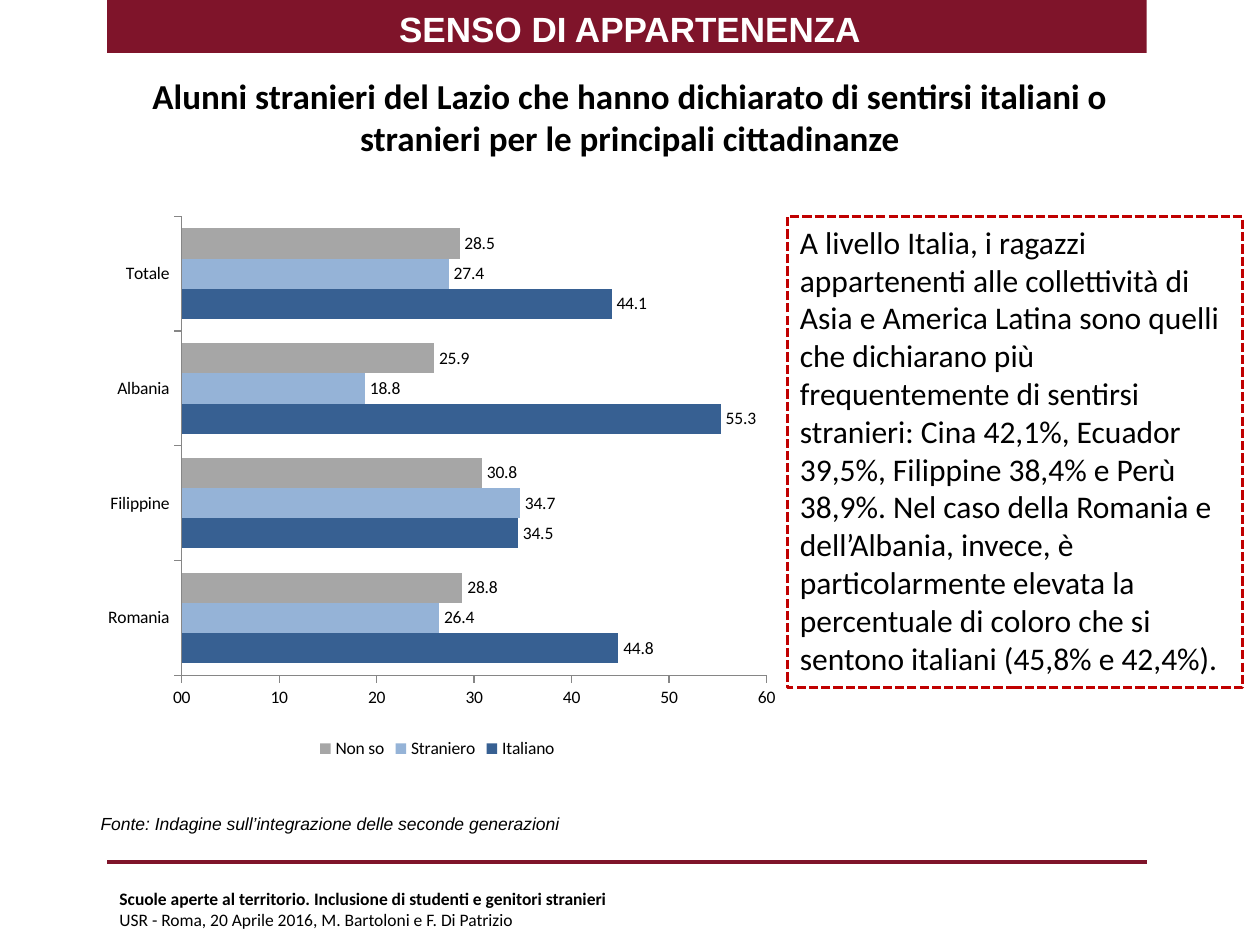
from lxml import etree
from pptx import Presentation
from pptx.chart.data import CategoryChartData as ChartData
from pptx.dml.color import RGBColor
from pptx.enum.chart import XL_CHART_TYPE as Kind, XL_LABEL_POSITION as Spot
from pptx.enum.chart import XL_LEGEND_POSITION as Side, XL_TICK_MARK as Tick
from pptx.enum.dml import MSO_LINE as Dash
from pptx.enum.shapes import MSO_CONNECTOR as Link, MSO_SHAPE as Shape
from pptx.enum.text import MSO_ANCHOR as Anchor, PP_ALIGN as Align
from pptx.oxml import parse_xml
from pptx.oxml.ns import nsdecls, qn
from pptx.util import Inches, Pt

WINE = RGBColor(0x7F, 0x14, 0x2A)
RED = RGBColor(0xC0, 0, 0)
BLACK = RGBColor(0, 0, 0)
WHITE = RGBColor(255, 255, 255)
GRAY = RGBColor(0x86, 0x86, 0x86)

HEAD = "SENSO DI APPARTENENZA"
TITLE = ("Alunni stranieri del Lazio che hanno dichiarato di sentirsi italiani o\v"
         "stranieri per le principali cittadinanze")
NOTE = ("A livello Italia, i ragazzi appartenenti alle collettività di Asia e "
        "America Latina sono quelli che dichiarano più frequentemente di sentirsi "
        "stranieri: Cina 42,1%, Ecuador 39,5%, Filippine 38,4% e Perù 38,9%. Nel "
        "caso della Romania e dell’Albania, invece, è particolarmente elevata la "
        "percentuale di coloro che si sentono italiani (45,8% e 42,4%).")
SOURCE = "Fonte: Indagine sull’integrazione delle seconde generazioni"
FOOT = ("Scuole aperte al territorio. Inclusione di studenti e genitori stranieri\n"
        "USR - Roma, 20 Aprile 2016, M. Bartoloni e F. Di Patrizio")
GROUPS = ["Romania", "Filippine", "Albania", "Totale"]
SERIES = [
    ("Italiano", [44.8, 34.5, 55.3, 44.1], RGBColor(0x37, 0x60, 0x92)),
    ("Straniero", [26.4, 34.7, 18.8, 27.4], RGBColor(0x95, 0xB3, 0xD7)),
    ("Non so", [28.8, 30.8, 25.9, 28.5], RGBColor(0xA6, 0xA6, 0xA6)),
]
PLOT = {"x": 0.134, "y": 0.037, "w": 0.838, "h": 0.808}


def write(shape, text, size, font="Calibri", color=BLACK, bold=False,
          italic=False, align=Align.LEFT, anchor=Anchor.TOP):
    frame = shape.text_frame
    frame.word_wrap = True
    frame.vertical_anchor = anchor
    frame.text = text
    for para in frame.paragraphs:
        para.alignment = align
        for run in para.runs:
            face = run.font
            face.name, face.size = font, Pt(size)
            face.bold, face.italic = bold, italic
            face.color.rgb = color
    return frame


def add_box(slide, spot, text, size, **style):
    box = slide.shapes.add_textbox(*map(Inches, spot))
    return write(box, text, size, **style)


def add_rect(slide, spot):
    rect = slide.shapes.add_shape(Shape.RECTANGLE, *map(Inches, spot))
    rect.shadow.inherit = False
    return rect


def add_bars(slide):
    data = ChartData(number_format="#,##0.0")
    data.categories = GROUPS
    for name, vals, _ in SERIES:
        data.add_series(name, vals)
    spot = map(Inches, (0.7, 1.55, 5.54, 4.51))
    chart = slide.shapes.add_chart(Kind.BAR_CLUSTERED, *spot, data).chart
    chart.has_title = False
    chart.font.name, chart.font.size = "Calibri", Pt(10)
    chart.font.color.rgb = BLACK
    chart.has_legend = True
    chart.legend.position = Side.BOTTOM
    chart.legend.include_in_layout = False

    plot = chart.plots[0]
    plot.gap_width, plot.overlap = 80, 0
    plot.vary_by_categories = False
    for bar, (_, _, color) in zip(plot.series, SERIES):
        bar.format.fill.solid()
        bar.format.fill.fore_color.rgb = color
        tags = bar.data_labels
        tags.show_value = True
        tags.number_format, tags.number_format_is_linked = "#,##0.0", False
        tags.position = Spot.OUTSIDE_END

    for axis in (chart.category_axis, chart.value_axis):
        axis.has_major_gridlines = False
        axis.major_tick_mark, axis.minor_tick_mark = Tick.OUTSIDE, Tick.NONE
        axis.format.line.color.rgb = GRAY
        axis.format.line.width = Pt(0.75)
    scale = chart.value_axis
    scale.minimum_scale, scale.maximum_scale, scale.major_unit = 0, 60, 10
    scale.tick_labels.number_format = "#,#00"
    scale.tick_labels.number_format_is_linked = False

    area = plot._element.getparent()
    for old in area.findall(qn("c:layout")):
        area.remove(old)
    modes = "".join(f'<c:{key}Mode val="edge"/>' for key in "xy")
    sizes = "".join(f'<c:{key} val="{val}"/>' for key, val in PLOT.items())
    area.insert(0, parse_xml(
        f'<c:layout {nsdecls("c")}><c:manualLayout><c:layoutTarget val="inner"/>'
        f'{modes}{sizes}</c:manualLayout></c:layout>'))


def main():
    deck = Presentation()
    deck.slide_width, deck.slide_height = Inches(10), Inches(7.5)
    slide = deck.slides.add_slide(deck.slide_layouts[6])

    band = add_rect(slide, (0.85, 0, 8.25, 0.42))
    band.fill.solid()
    band.fill.fore_color.rgb = WINE
    band.line.fill.background()

    ends = map(Inches, (0.85, 6.84, 9.1, 6.84))
    rule = slide.shapes.add_connector(Link.STRAIGHT, *ends)
    rule.line.color.rgb, rule.line.width = WINE, Pt(2)
    etree.SubElement(rule._element.spPr, qn("a:effectLst"))

    mid = {"bold": True, "align": Align.CENTER, "anchor": Anchor.MIDDLE}
    add_box(slide, (0.5, 0.3, 9, 1.25), TITLE, 20, **mid)
    add_box(slide, (0, -0.01, 10, 0.47), HEAD, 20, font="Arial", color=WHITE, **mid)

    add_bars(slide)
    add_box(slide, (0.7, 6.4, 5, 0.27), SOURCE, 10, font="Arial", italic=True)

    note = add_rect(slide, (6.25, 1.72, 3.61, 3.74))
    note.fill.background()
    note.line.color.rgb, note.line.width = RED, Pt(1.75)
    note.line.dash_style = Dash.SQUARE_DOT
    write(note, NOTE, 18)

    foot = add_box(slide, (0.85, 7, 9.6, 0.44), FOOT, 10)
    foot.paragraphs[0].runs[0].font.bold = True

    deck.save("out.pptx")


if __name__ == "__main__":
    main()
